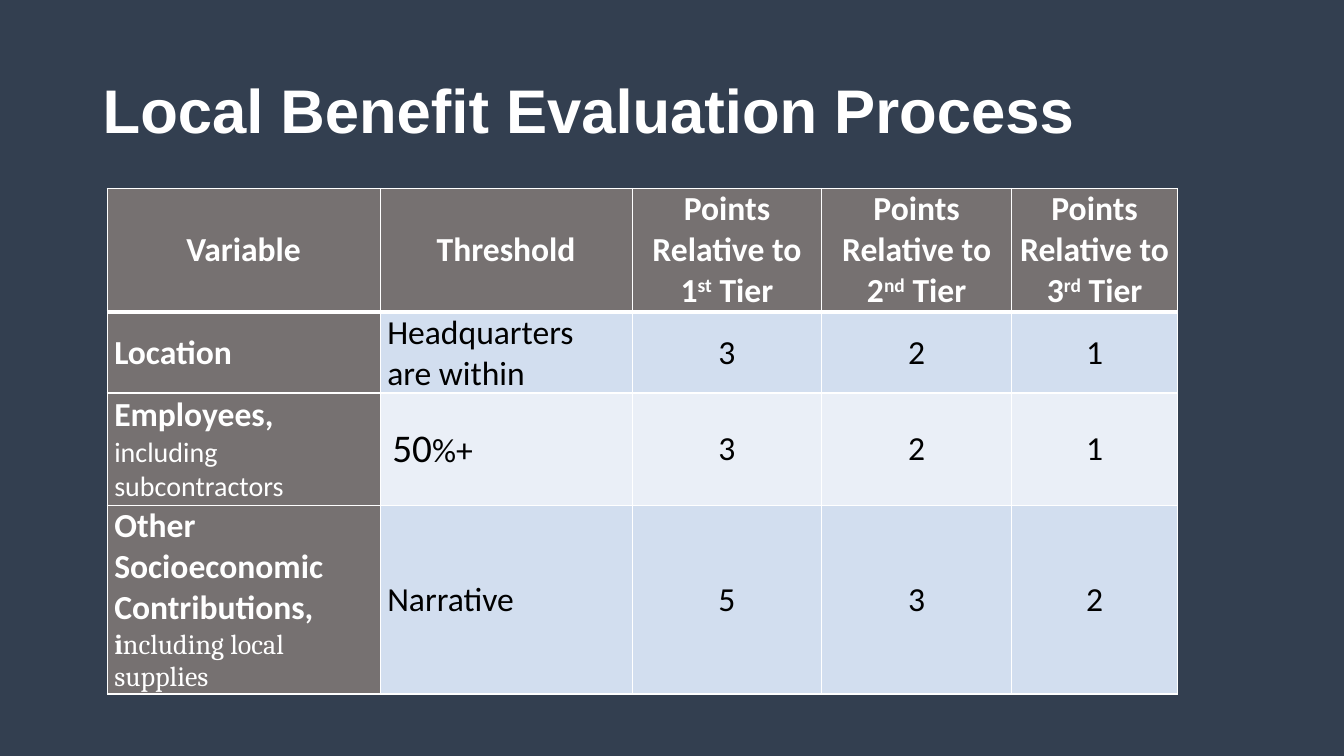
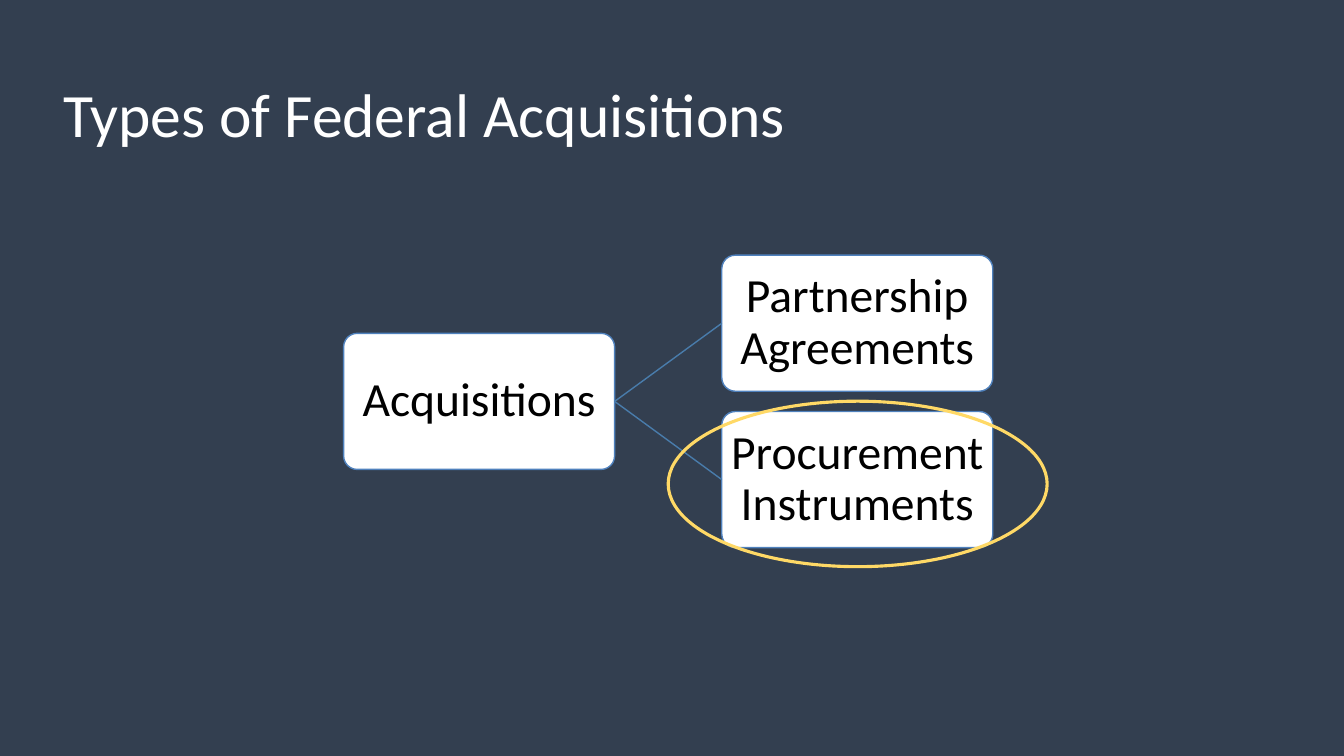
from lxml.etree import SubElement
from pptx import Presentation
from pptx.dml.color import RGBColor
from pptx.enum.shapes import MSO_CONNECTOR, MSO_SHAPE
from pptx.enum.text import MSO_ANCHOR, PP_ALIGN
from pptx.oxml import parse_xml
from pptx.oxml.ns import nsdecls, qn
from pptx.util import Cm, Pt

NAVY = RGBColor(0x33, 0x3F, 0x50)
WHITE = RGBColor(0xFF, 0xFF, 0xFF)
BLACK = RGBColor(0, 0, 0)
GRAY = RGBColor(0x76, 0x71, 0x71)
BAND_COLORS = [RGBColor(0xD2, 0xDE, 0xEF), RGBColor(0xEA, 0xEF, 0xF7)]
BOX_BLUE = RGBColor(0x4F, 0x81, 0xBD)
LINK_BLUE = RGBColor(0x49, 0x7C, 0xAB)
YELLOW = RGBColor(0xFF, 0xD9, 0x66)

BODY_FONT = "Calibri"

# A cell is a list of runs: (text, font settings that differ from the cell's own).
SMALL = {"size": Pt(20), "bold": False}
SMALL_SERIF = {"size": Pt(20), "name": "Cambria"}
TIER_SUFFIXES = ["st", "nd", "rd"]
HEADER = [[("Variable", {})], [("Threshold", {})]] + [
    [(f"Points Relative to {tier}", {}), (suffix, {"superscript": True}), (" Tier", {})]
    for tier, suffix in enumerate(TIER_SUFFIXES, 1)
]
CRITERIA = [
    ([("Location", {})], [("Headquarters are within", {})], (3, 2, 1)),
    (
        [("Employees, ", {}), ("including subcontractors", SMALL)],
        [("\u00a0", {"size": Pt(16)}), ("50", {"size": Pt(28)}), ("%+", {})],
        (3, 2, 1),
    ),
    (
        [
            ("Other Socioeconomic Contributions, ", {}),
            ("i", SMALL_SERIF),
            ("ncluding local supplies", {**SMALL_SERIF, "bold": False}),
        ],
        [("Narrative", {})],
        (5, 3, 2),
    ),
]
COLUMN_WIDTHS = [6.88, 6.35, 4.78, 4.78, 4.19]
ROW_HEIGHTS = [3.12, 2.03, 2.84, 4.72]

ROOT_TYPE = "Acquisitions"
SUBTYPES = ["Partnership Agreements", "Procurement Instruments"]
BOX_WIDTH, BOX_HEIGHT, BOX_GAP = 6.83, 3.43, 0.51
ROOT_LEFT, SUBTYPE_LEFT, SUBTYPE_TOP = 8.66, 18.19, 6.43


def style_font(font, size, color, name=BODY_FONT, bold=False):
    font.size, font.name, font.bold = Pt(size), name, bold
    font.color.rgb = color


def add_slide(presentation, title, left, width, height, font_name=BODY_FONT, bold=False):
    """Add a navy slide with its title."""
    slide = presentation.slides.add_slide(presentation.slide_layouts[6])
    slide.background.fill.solid()
    slide.background.fill.fore_color.rgb = NAVY
    frame = slide.shapes.add_textbox(Cm(left), Cm(1.02), Cm(width), Cm(height)).text_frame
    frame.word_wrap = True
    frame.vertical_anchor = MSO_ANCHOR.MIDDLE
    paragraph = frame.paragraphs[0]
    paragraph.text = title
    paragraph.line_spacing = 0.9
    style_font(paragraph.font, 44, WHITE, font_name, bold)
    return slide


def set_borders(cell, top, bottom):
    """Draw white borders; top and bottom are widths in points."""
    properties = cell._tc.get_or_add_tcPr()
    widths = {"lnL": 1, "lnR": 1, "lnT": top, "lnB": bottom}
    for index, (side, width) in enumerate(widths.items()):
        properties.insert(index, parse_xml(
            f'<a:{side} {nsdecls("a")} w="{Pt(width)}"><a:solidFill>'
            f'<a:srgbClr val="{WHITE}"/></a:solidFill></a:{side}>'
        ))


def fill_cell(cell, runs, fill, color, bold, alignment):
    cell.fill.solid()
    cell.fill.fore_color.rgb = fill
    cell.vertical_anchor = MSO_ANCHOR.MIDDLE
    cell.margin_left = cell.margin_right = Cm(0.18)
    cell.margin_top = cell.margin_bottom = 0
    paragraph = cell.text_frame.paragraphs[0]
    paragraph.alignment = alignment
    style_font(paragraph.font, 24, color, bold=bold)
    for text, settings in runs:
        run = paragraph.add_run()
        run.text = text
        for setting, value in settings.items():
            if setting == "superscript":
                run._r.get_or_add_rPr().set("baseline", "30000")
            else:
                setattr(run.font, setting, value)


def add_criteria_table(slide):
    rows = [HEADER] + [
        [variable, threshold] + [[(str(score), {})] for score in scores]
        for variable, threshold, scores in CRITERIA
    ]
    table = slide.shapes.add_table(
        len(rows), len(HEADER), Cm(2.7), Cm(4.75),
        Cm(sum(COLUMN_WIDTHS)), Cm(sum(ROW_HEIGHTS)),
    ).table
    table.first_row = table.horz_banding = False
    for column, width in zip(table.columns, COLUMN_WIDTHS):
        column.width = Cm(width)
    for row, height in zip(table.rows, ROW_HEIGHTS):
        row.height = Cm(height)
    for row_index, row in enumerate(rows):
        for column_index, runs in enumerate(row):
            is_heading = row_index == 0 or column_index == 0
            is_centered = row_index == 0 or column_index > 1
            cell = table.cell(row_index, column_index)
            fill_cell(
                cell, runs,
                GRAY if is_heading else BAND_COLORS[(row_index - 1) % 2],
                WHITE if is_heading else BLACK,
                is_heading,
                PP_ALIGN.CENTER if is_centered else PP_ALIGN.LEFT,
            )
            set_borders(cell, 3 if row_index == 1 else 1, 3 if row_index == 0 else 1)


def add_box(slide, text, left, top):
    box = slide.shapes.add_shape(
        MSO_SHAPE.ROUNDED_RECTANGLE, Cm(left), Cm(top), Cm(BOX_WIDTH), Cm(BOX_HEIGHT)
    )
    box.adjustments[0] = 0.1
    box.shadow.inherit = False
    box.fill.solid()
    box.fill.fore_color.rgb = WHITE
    box.line.color.rgb = BOX_BLUE
    box.line.width = Pt(1)
    frame = box.text_frame
    frame.word_wrap = True
    frame.vertical_anchor = MSO_ANCHOR.MIDDLE
    frame.margin_left = frame.margin_right = Cm(0.05)
    frame.margin_top = frame.margin_bottom = Cm(0.05)
    paragraph = frame.paragraphs[0]
    paragraph.text = text
    paragraph.alignment = PP_ALIGN.CENTER
    paragraph.line_spacing = 0.9
    style_font(paragraph.font, 34, BLACK)
    return box


def connect(slide, parent, child):
    """Join the right side of parent to the left side of child."""
    connector = slide.shapes.add_connector(MSO_CONNECTOR.STRAIGHT, 0, 0, 0, 0)
    connector.begin_connect(parent, 3)
    connector.end_connect(child, 1)
    connector.line.color.rgb = LINK_BLUE
    connector.line.width = Pt(1)
    SubElement(connector._element.spPr, qn("a:effectLst"))


def add_hierarchy(slide):
    pitch = BOX_HEIGHT + BOX_GAP
    root_top = SUBTYPE_TOP + pitch * (len(SUBTYPES) - 1) / 2
    root = add_box(slide, ROOT_TYPE, ROOT_LEFT, root_top)
    for index, subtype in enumerate(SUBTYPES):
        box = add_box(slide, subtype, SUBTYPE_LEFT, SUBTYPE_TOP + index * pitch)
        connect(slide, root, box)


def add_highlight(slide):
    ellipse = slide.shapes.add_shape(MSO_SHAPE.OVAL, Cm(16.84), Cm(10.11), Cm(9.55), Cm(4.17))
    ellipse.shadow.inherit = False
    ellipse.fill.background()
    ellipse.line.color.rgb = YELLOW
    ellipse.line.width = Pt(2.25)


def main():
    presentation = Presentation()
    presentation.slide_width, presentation.slide_height = Cm(33.87), Cm(19.05)

    evaluation = add_slide(
        presentation, "Local Benefit Evaluation Process", 2.34, 29.21, 3.68, "Arial", True
    )
    add_criteria_table(evaluation)

    acquisitions = add_slide(presentation, "Types of Federal Acquisitions", 1.35, 26.14, 3.89)
    add_hierarchy(acquisitions)
    add_highlight(acquisitions)

    presentation.save("out.pptx")


if __name__ == "__main__":
    main()
